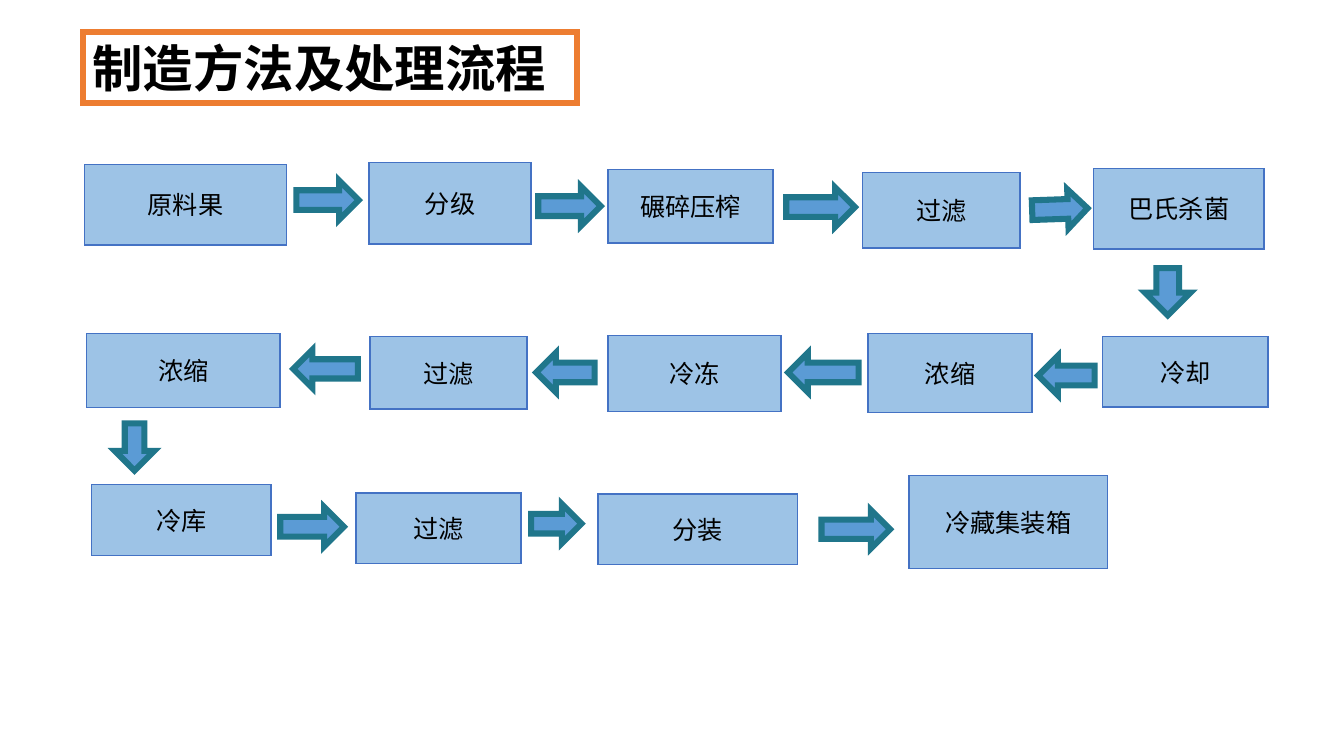
"""Draw the flow chart of how the fruit is made into stored juice."""
import lxml.etree
import pptx
import pptx.dml.color
import pptx.enum.shapes
import pptx.enum.text
import pptx.oxml.ns
import pptx.util

Pt = pptx.util.Pt
RGBColor = pptx.dml.color.RGBColor
Kind = pptx.enum.shapes.MSO_SHAPE
Anchor = pptx.enum.text.MSO_ANCHOR
Align = pptx.enum.text.PP_ALIGN
qn = pptx.oxml.ns.qn

WHITE = RGBColor(0xFF, 0xFF, 0xFF)
BLACK = RGBColor(0x00, 0x00, 0x00)
ORANGE = RGBColor(0xED, 0x7D, 0x31)
PALE = RGBColor(0x9D, 0xC3, 0xE6)
EDGE = RGBColor(0x44, 0x72, 0xC4)
BLUE = RGBColor(0x5B, 0x9B, 0xD5)
TEAL = RGBColor(0x20, 0x76, 0x8B)
THICK = 4.33

STEPS = [
    ("原料果", 60.5, 117.4, 144, 57.6),
    ("分级", 263.5, 115.9, 115.9, 58.3),
    ("碾碎压榨", 434.2, 121, 118.1, 52.6),
    ("过滤", 616.3, 123.1, 112.3, 54),
    ("巴氏杀菌", 781.2, 120.2, 121.7, 57.6),
    ("冷却", 787.7, 240.5, 118.1, 50.4),
    ("浓缩", 619.9, 238.3, 117.4, 56.2),
    ("冷冻", 434.2, 239.8, 123.8, 54),
    ("过滤", 264.2, 240.5, 112.3, 51.8),
    ("浓缩", 61.9, 238.3, 138.2, 52.6),
    ("冷库", 65.5, 346.3, 128.2, 50.4),
    ("过滤", 254.2, 352.1, 118.1, 50.4),
    ("分装", 427, 352.8, 142.6, 50.4),
    ("冷藏集装箱", 649.4, 339.8, 141.8, 66.2),
]
ARROWS = [
    (Kind.RIGHT_ARROW, 211.7, 128.9, 44.6, 28.1, 0),
    (Kind.RIGHT_ARROW, 384.5, 133.2, 44.6, 28.1, 0),
    (Kind.RIGHT_ARROW, 561.6, 133.9, 49, 28.1, 0),
    (Kind.DOWN_ARROW, 743, 129.6, 28.1, 39.6, 268),
    (Kind.DOWN_ARROW, 817.9, 191.5, 32.4, 33.8, 0),
    (Kind.LEFT_ARROW, 741.6, 254.2, 40.3, 28.1, 0),
    (Kind.LEFT_ARROW, 563, 252, 50.4, 28.1, 0),
    (Kind.LEFT_ARROW, 383, 252, 41.8, 28.1, 0),
    (Kind.LEFT_ARROW, 209.5, 249.8, 46.1, 27.4, 0),
    (Kind.DOWN_ARROW, 82.1, 302.4, 28.1, 33.8, 0),
    (Kind.RIGHT_ARROW, 200.2, 362.2, 45.4, 28.1, 0),
    (Kind.RIGHT_ARROW, 379.4, 360, 36, 28.1, 0),
    (Kind.RIGHT_ARROW, 586.8, 364.3, 49, 27.4, 0),
]


def draw(kind, left, top, width, height, fill, line, weight):
    shape = slide.shapes.add_shape(kind, Pt(left), Pt(top), Pt(width), Pt(height))
    shape.shadow.inherit = False
    shape.fill.solid()
    shape.fill.fore_color.rgb = fill
    shape.line.color.rgb = line
    shape.line.width = Pt(weight)
    edge = shape._element.spPr.find(qn("a:ln"))
    lxml.etree.SubElement(edge, qn("a:miter"), lim="800000")
    return shape


def write(shape, text, size, face, bold, align, anchor):
    frame = shape.text_frame
    frame.text = text
    frame.word_wrap = True
    frame.vertical_anchor = anchor
    frame.paragraphs[0].alignment = align
    run = frame.paragraphs[0].runs[0]
    run.font.size = Pt(size)
    run.font.bold = bold
    run.font.color.rgb = BLACK
    run.font.name = face
    lxml.etree.SubElement(run._r.get_or_add_rPr(), qn("a:ea"), typeface=face)


deck = pptx.Presentation()
deck.slide_width = Pt(960)
deck.slide_height = Pt(540)
slide = deck.slides.add_slide(deck.slide_layouts[6])

title = draw(Kind.RECTANGLE, 59, 23, 353.5, 50.4, WHITE, ORANGE, THICK)
write(title, "制造方法及处理流程", 36, "Noto Sans CJK SC", True, Align.LEFT, Anchor.TOP)
title.text_frame.auto_size = pptx.enum.text.MSO_AUTO_SIZE.SHAPE_TO_FIT_TEXT

for text, *place in STEPS:
    step = draw(Kind.RECTANGLE, *place, PALE, EDGE, 1)
    write(step, text, 18, "Noto Sans Mono", False, Align.CENTER, Anchor.MIDDLE)

for kind, *place, turn in ARROWS:
    arrow = draw(kind, *place, BLUE, TEAL, THICK)
    arrow.rotation = turn

deck.save("out.pptx")
